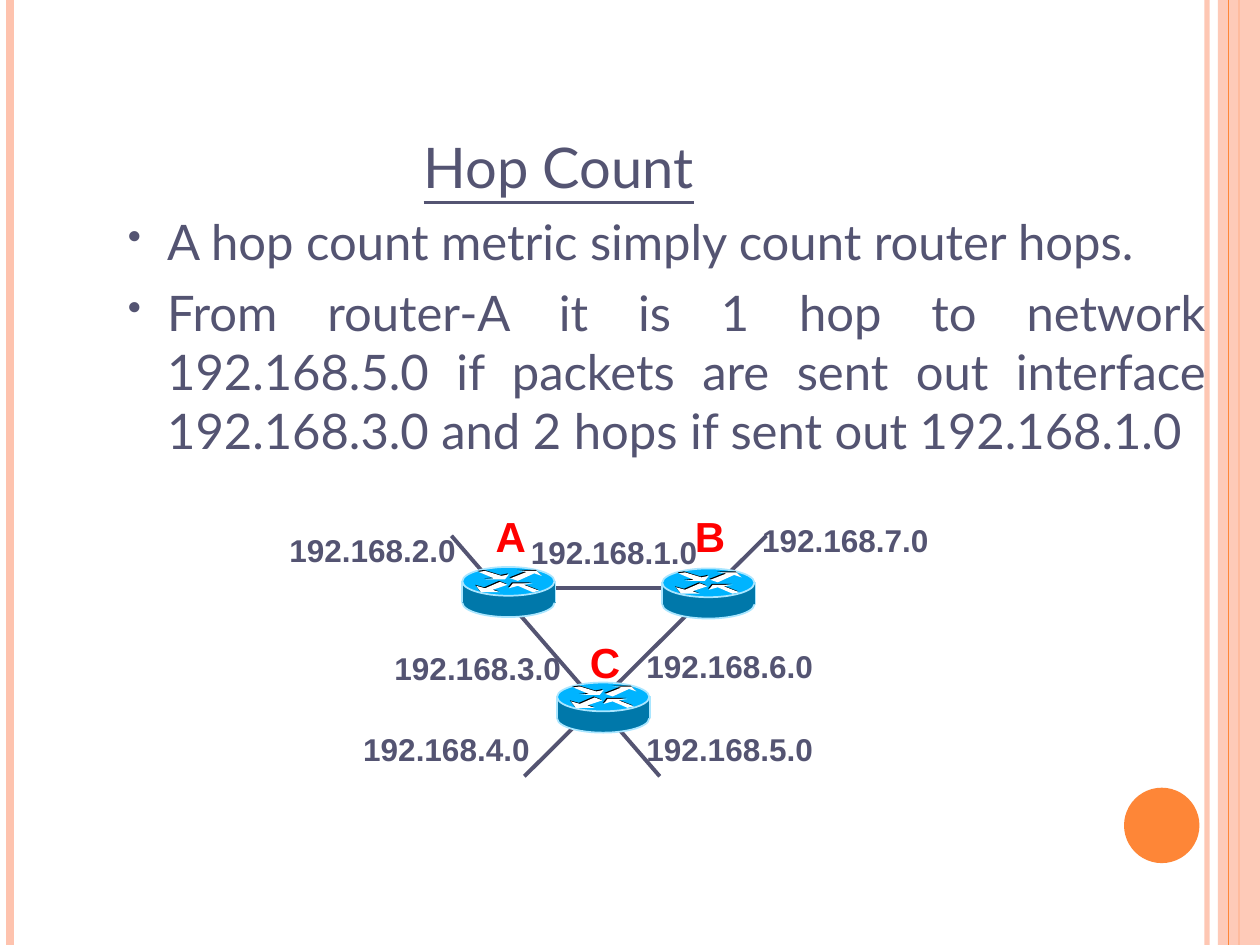
from lxml.etree import SubElement
from pptx import Presentation
from pptx.dml.color import RGBColor
from pptx.enum.shapes import MSO_CONNECTOR, MSO_SHAPE
from pptx.enum.text import MSO_AUTO_SIZE, PP_ALIGN
from pptx.oxml.ns import qn
from pptx.util import Cm, Pt

COLOURS = {
    "text": "545472",
    "letter": "FF0000",
    "peach": "FEC3AE",
    "orange": "FE8637",
    "router side": "0078AA",
    "router top": "00B4FF",
    "router edge": "AAE6FF",
    "shade": "000000",
    "arrow": "FFFFFF",
}
WIDTH, HEIGHT = 25.4, 19.05

# Outlines in cm, measured from the top left corner of a router.
ROUTER_ARROWS = [
    [(0.97, 0.23), (1.12, 0.28), (1.45, 0.13), (1.6, 0.18), (1.5, 0.08), (1.12, 0.08), (1.3, 0.1)],
    [(0.91, 0.36), (0.76, 0.3), (0.46, 0.43), (0.28, 0.38), (0.38, 0.51), (0.76, 0.51), (0.61, 0.46)],
    [(0.33, 0.1), (0.46, 0.08), (0.79, 0.18), (0.94, 0.15), (0.86, 0.25), (0.46, 0.25), (0.64, 0.23)],
    [(1.55, 0.48), (1.42, 0.51), (1.12, 0.38), (0.94, 0.43), (1.02, 0.33), (1.42, 0.33), (1.24, 0.36)],
]
ROUTERS = [(9.32, 11.43), (13.35, 11.46), (11.23, 13.76)]
LINKS = [
    (9.1, 10.8, 13.3, 15.65),
    (15.45, 10.8, 10.57, 15.65),
    (10.16, 11.85, 14.38, 11.85),
]
LETTERS = {"A": (9.74, 10.16), "B": (13.76, 10.16), "C": (11.64, 12.7)}
NETWORKS = {
    "192.168.1.0": (10.37, 10.62),
    "192.168.7.0": (15.03, 10.37),
    "192.168.6.0": (12.7, 12.91),
    "192.168.5.0": (12.7, 14.6),
    "192.168.2.0": (5.5, 10.58),
    "192.168.3.0": (7.62, 12.95),
    "192.168.4.0": (6.99, 14.6),
}
BULLETS = [
    "A hop count metric simply count router hops.",
    "From router-A it is 1 hop to network 192.168.5.0 if packets are sent out "
    "interface 192.168.3.0 and 2 hops if sent out 192.168.1.0",
]


def rgb(name):
    return RGBColor.from_string(COLOURS[name])


def set_opacity(fill_format_parent, percent):
    """Make the solid colour found inside an XML element partly see-through."""
    colour = next(fill_format_parent.iter(qn("a:srgbClr")))
    SubElement(colour, qn("a:alpha"), val=str(percent * 1000))


def write(paragraph, text, *, size, font="Lato", colour="text", bold=False,
          underline=False, align=PP_ALIGN.LEFT):
    paragraph.alignment = align
    span = paragraph.add_run()
    span.text = text
    span.font.name = font
    span.font.size = Pt(size)
    span.font.bold = bold
    span.font.underline = underline
    span.font.color.rgb = rgb(colour)


def set_indent(paragraph, left, hanging=0):
    properties = paragraph._p.get_or_add_pPr()
    properties.set("marL", str(Cm(left)))
    properties.set("indent", str(-Cm(hanging)))
    return properties


def add_bullet(paragraph):
    paragraph.level = 1
    paragraph.space_before = Pt(7)
    properties = set_indent(paragraph, 2.06, 0.79)
    colour = SubElement(properties, qn("a:buClr"))
    SubElement(colour, qn("a:srgbClr"), val=COLOURS["text"])
    SubElement(properties, qn("a:buSzPct"), val="80000")
    SubElement(properties, qn("a:buChar"), char="•")


class Painter:
    """Draws elements on one page; all lengths are in cm."""

    def __init__(self, page):
        self.page = page

    def paint(self, shape, fill, edge=None):
        shape.shadow.inherit = False
        shape.fill.solid()
        shape.fill.fore_color.rgb = rgb(fill)
        if edge:
            shape.line.color.rgb = rgb(edge)
            shape.line.width = Pt(1)
        else:
            shape.line.fill.background()
        return shape

    def shape(self, kind, left, top, width, height, fill, edge=None):
        shape = self.page.shapes.add_shape(kind, Cm(left), Cm(top), Cm(width), Cm(height))
        return self.paint(shape, fill, edge)

    def outline(self, points, fill):
        corners = [(Cm(x), Cm(y)) for x, y in points]
        builder = self.page.shapes.build_freeform(*corners[0])
        builder.add_line_segments(corners[1:], close=True)
        return self.paint(builder.convert_to_shape(), fill)

    def line(self, x1, y1, x2, y2, colour, width):
        line = self.page.shapes.add_connector(
            MSO_CONNECTOR.STRAIGHT, Cm(x1), Cm(y1), Cm(x2), Cm(y2))
        line.line.color.rgb = rgb(colour)
        line.line.width = Pt(width)
        SubElement(line._element.spPr, qn("a:effectLst"))
        return line

    def text_box(self, left, top, width, height):
        box = self.page.shapes.add_textbox(Cm(left), Cm(top), Cm(width), Cm(height))
        box.text_frame.word_wrap = True
        return box.text_frame

    def label(self, text, left, top, width, height, **style):
        frame = self.text_box(left, top, width, height)
        frame.auto_size = MSO_AUTO_SIZE.SHAPE_TO_FIT_TEXT
        write(frame.paragraphs[0], text, font="Arial", bold=True, **style)

    def router(self, left, top):
        self.shape(MSO_SHAPE.OVAL, left, top + 0.43, 1.86, 0.58, "router side", "router edge")
        self.shape(MSO_SHAPE.RECTANGLE, left, top + 0.29, 1.89, 0.43, "router side")
        self.shape(MSO_SHAPE.OVAL, left, top, 1.86, 0.58, "router top", "router edge")
        for colour, shift in (("shade", -0.02), ("arrow", 0)):
            for arrow in ROUTER_ARROWS:
                self.outline([(left + x + shift, top + y + shift) for x, y in arrow], colour)
        for x in (left, left + 1.88):
            self.line(x, top + 0.28, x, top + 0.71, "router edge", 1)


def draw_frame(painter):
    def stripe(x, colour, width):
        return painter.line(x, 0, x, HEIGHT, colour, width)

    set_opacity(stripe(24.33, "peach", 3)._element, 93)
    stripe(0.21, "peach", 4.5)
    stripe(24.98, "orange", 1.5)
    band = painter.shape(MSO_SHAPE.RECTANGLE, 24.55, 0, 0.85, HEIGHT, "peach")
    set_opacity(band._element, 87)
    stripe(24.77, "orange", 0.75)
    painter.shape(MSO_SHAPE.OVAL, 22.66, 15.88, 1.52, 1.52, "orange")


def draw_body(painter):
    frame = painter.text_box(1.06, 2.54, 23.5, 7.2)
    title = frame.paragraphs[0]
    set_indent(title, 7.23)
    write(title, "Hop Count", size=32, underline=True)
    for text in BULLETS:
        paragraph = frame.add_paragraph()
        add_bullet(paragraph)
        write(paragraph, text, size=28, align=PP_ALIGN.JUSTIFY)


def draw_network(painter):
    for link in LINKS:
        painter.line(*link, "text", 2.25)
    for corner in ROUTERS:
        painter.router(*corner)
    for letter, corner in LETTERS.items():
        painter.label(letter, *corner, 1.05, 1.27, size=24, colour="letter")
    for address, corner in NETWORKS.items():
        painter.label(address, *corner, 4.02, 1.02, size=18, align=PP_ALIGN.CENTER)


def main():
    deck = Presentation()
    deck.slide_width, deck.slide_height = Cm(WIDTH), Cm(HEIGHT)
    painter = Painter(deck.slides.add_slide(deck.slide_layouts[6]))
    draw_frame(painter)
    draw_body(painter)
    draw_network(painter)
    deck.save("out.pptx")


if __name__ == "__main__":
    main()
